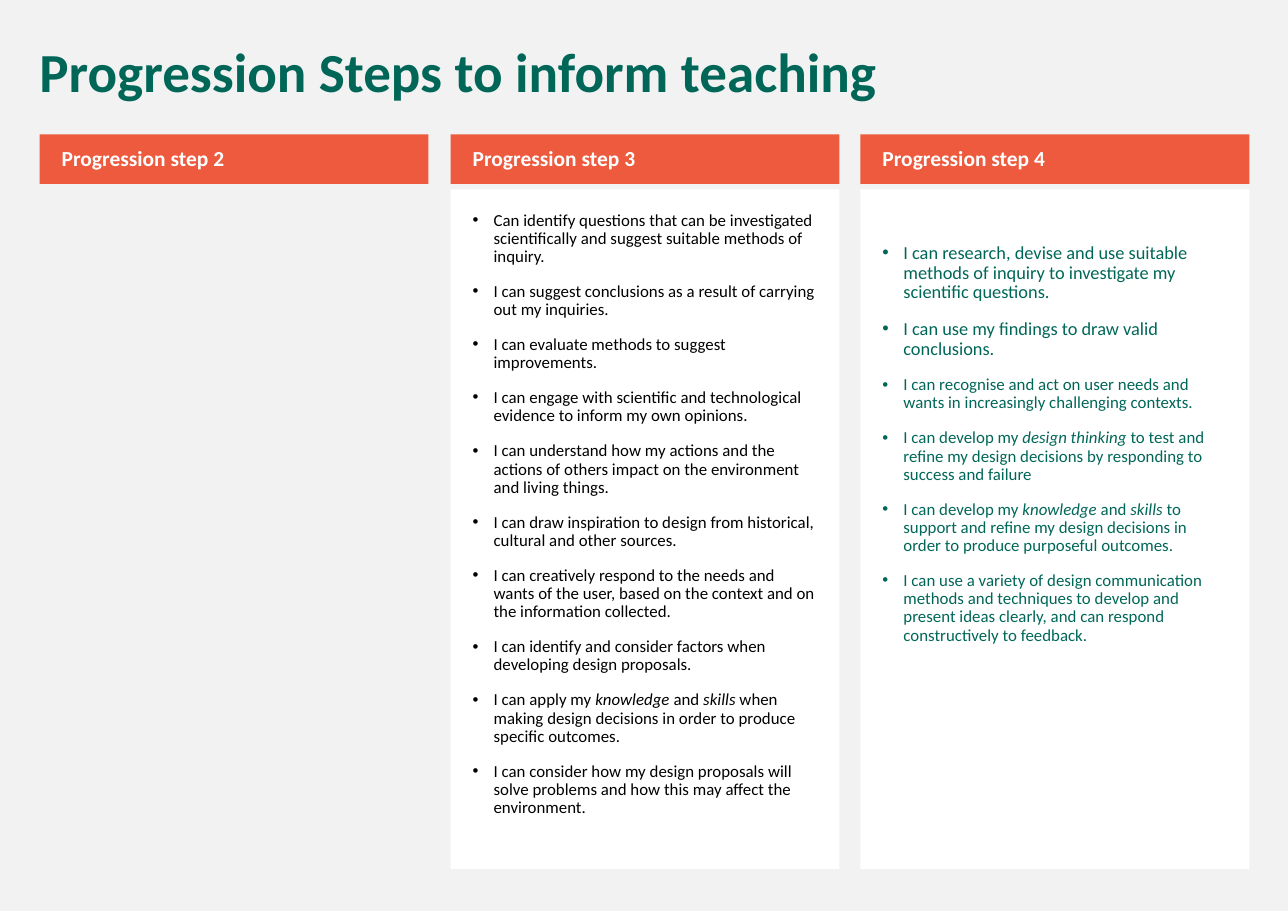
from lxml import etree
from pptx import Presentation
from pptx.dml.color import RGBColor
from pptx.enum.shapes import MSO_SHAPE
from pptx.enum.text import MSO_ANCHOR, PP_ALIGN
from pptx.oxml.ns import qn
from pptx.util import Pt

PX = 9144  # 100 px to the inch
FONT = "Calibri"
GREY = RGBColor(0xF2, 0xF2, 0xF2)
ORANGE = RGBColor(0xED, 0x5A, 0x3E)
GREEN = RGBColor(0x00, 0x67, 0x58)
WHITE = RGBColor(0xFF, 0xFF, 0xFF)
BLACK = RGBColor(0x00, 0x00, 0x00)

# Asterisks mark italics; each bullet goes with its size in points.
STEP_3 = [(text, 11) for text in (
    "Can identify questions that can be investigated scientifically and suggest suitable methods of inquiry.",
    "I can suggest conclusions as a result of carrying out my inquiries.",
    "I can evaluate methods to suggest improvements.",
    "I can engage with scientific and technological evidence to inform my own opinions.",
    "I can understand how my actions and the actions of others impact on the environment and living things.",
    "I can draw inspiration to design from historical, cultural and other sources.",
    "I can creatively respond to the needs and wants of the user, based on the context and on the "
    "information collected.",
    "I can identify and consider factors when developing design proposals.",
    "I can apply my *knowledge* and *skills* when making design decisions in order to produce specific outcomes.",
    "I can consider how my design proposals will solve problems and how this may affect the environment.",
)]
STEP_4 = [
    ("I can research, devise and use suitable methods of inquiry to investigate my scientific questions.", 12),
    ("I can use my findings to draw valid conclusions.", 12),
    ("I can recognise and act on user needs and wants in increasingly challenging contexts.", 11),
    ("I can develop my *design thinking* to test and refine my design decisions by responding to "
     "success and failure", 11),
    ("I can develop my *knowledge* and *skills* to support and refine my design decisions in order to "
     "produce purposeful outcomes.", 11),
    ("I can use a variety of design communication methods and techniques to develop and present ideas "
     "clearly, and can respond constructively to feedback.", 11),
]
# Left edge, heading, bullets, bullet colour, top inset of the panel
COLUMNS = [
    (36, "Progression step 2", [], BLACK, 20),
    (409, "Progression step 3", STEP_3, BLACK, 20),
    (781, "Progression step 4", STEP_4, GREEN, 49),
]
COLUMN_TOP, COLUMN_W, COLUMN_H = 122, 353, 667
HEADING_H, PANEL_OFFSET = 45, 50


def set_frame(tf, anchor, left, top, right, bottom):
    tf.word_wrap = True
    tf.vertical_anchor = anchor
    tf.margin_left, tf.margin_top = left * PX, top * PX
    tf.margin_right, tf.margin_bottom = right * PX, bottom * PX


def write(p, text, size, color, bold=False):
    """Fill a paragraph, setting the parts between asterisks in italics."""
    p.alignment = PP_ALIGN.LEFT
    p.line_spacing = 0.9
    p.space_before = Pt(11)
    for i, part in enumerate(text.split("*")):
        r = p.add_run()
        r.text = part
        r.font.name = FONT
        r.font.size = Pt(size)
        r.font.bold = bold
        r.font.italic = i % 2 == 1
        r.font.color.rgb = color


def add_bullet(p):
    pPr = p._p.get_or_add_pPr()
    pPr.set("marL", str(19 * PX))
    pPr.set("indent", str(-19 * PX))
    etree.SubElement(pPr, qn("a:buFont")).set("typeface", "Arial")
    etree.SubElement(pPr, qn("a:buChar")).set("char", "•")


def add_box(slide, x, y, w, h, fill):
    sp = slide.shapes.add_shape(MSO_SHAPE.RECTANGLE, x * PX, y * PX, w * PX, h * PX)
    sp.shadow.inherit = False
    sp.fill.solid()
    sp.fill.fore_color.rgb = fill
    sp.line.fill.background()
    return sp.text_frame


def add_title(slide, x, y, w, h):
    tf = slide.shapes.add_textbox(x * PX, y * PX, w * PX, h * PX).text_frame
    set_frame(tf, MSO_ANCHOR.TOP, 10, 5, 10, 5)
    write(tf.paragraphs[0], "Progression Steps to inform teaching", 36, GREEN, bold=True)


def add_column(slide, x, y, w, h, heading, bullets, color, top_inset):
    """Place a heading bar and, if there are bullets, the panel below it."""
    tf = add_box(slide, x, y, w, HEADING_H, ORANGE)
    set_frame(tf, MSO_ANCHOR.MIDDLE, 20, 5, 10, 5)
    write(tf.paragraphs[0], heading, 14, WHITE, bold=True)
    if not bullets:
        return
    tf = add_box(slide, x, y + PANEL_OFFSET, w, h - PANEL_OFFSET, WHITE)
    set_frame(tf, MSO_ANCHOR.TOP, 20, top_inset, 20, 20)
    for i, (text, size) in enumerate(bullets):
        p = tf.add_paragraph() if i else tf.paragraphs[0]
        write(p, text, size, color)
        add_bullet(p)


def main():
    prs = Presentation()
    prs.slide_width, prs.slide_height = 1169 * PX, 827 * PX
    slide = prs.slides.add_slide(prs.slide_layouts[6])
    slide.background.fill.solid()
    slide.background.fill.fore_color.rgb = GREY
    add_title(slide, 26, 36, 1108, 65)
    for x, *content in COLUMNS:
        add_column(slide, x, COLUMN_TOP, COLUMN_W, COLUMN_H, *content)
    prs.save("out.pptx")


if __name__ == "__main__":
    main()
